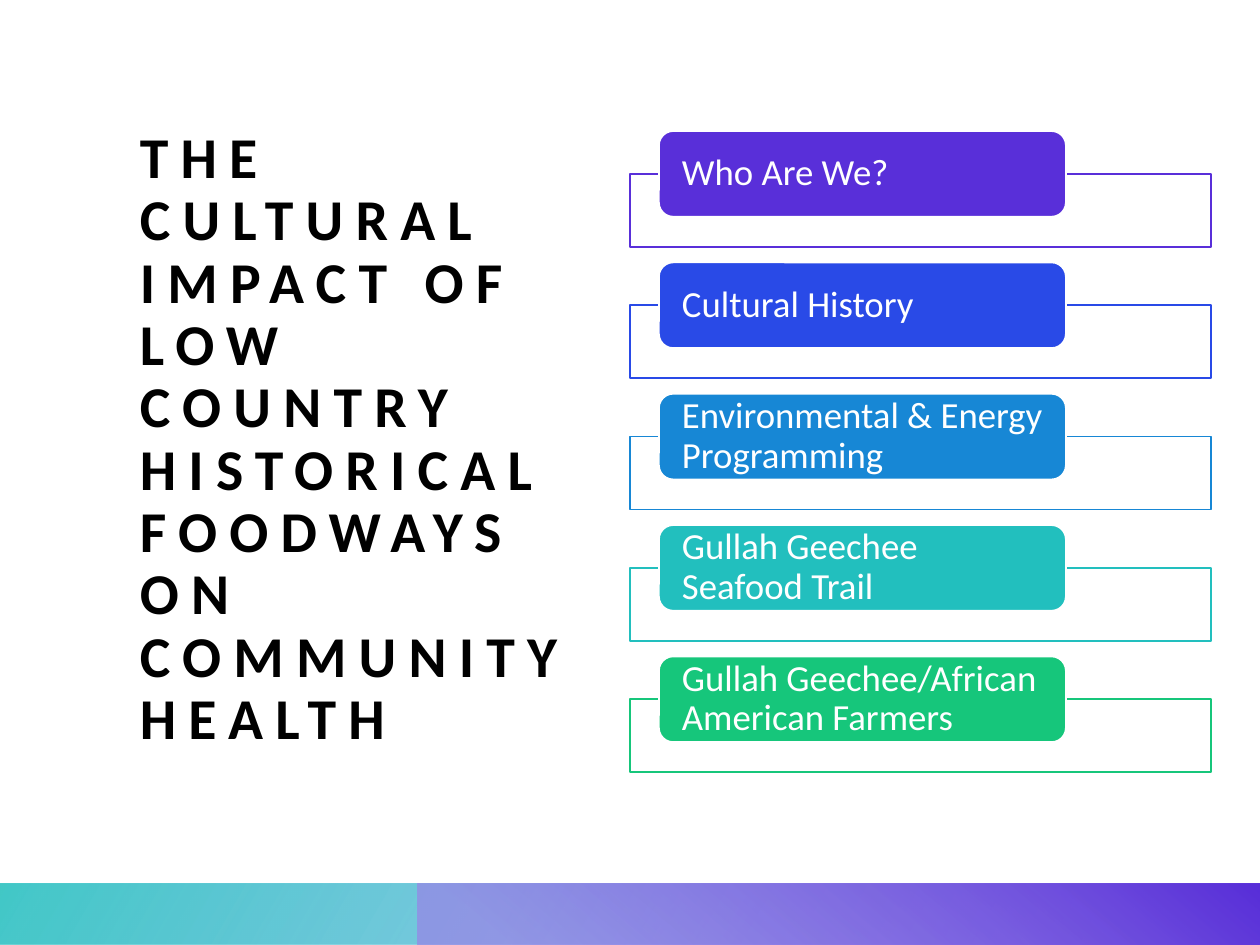
from lxml.etree import SubElement
from pptx import Presentation
from pptx.dml.color import RGBColor
from pptx.enum.shapes import MSO_SHAPE
from pptx.enum.text import MSO_ANCHOR, MSO_AUTO_SIZE, PP_ALIGN
from pptx.oxml.ns import qn
from pptx.util import Inches, Pt

TITLE = "THE CULTURAL IMPACT OF LOW COUNTRY HISTORICAL FOODWAYS ON COMMUNITY HEALTH"
TOPICS = [
    ("Who Are We?", "592FD9"),
    ("Cultural History", "294AE7"),
    ("Environmental & Energy Programming", "1787D5"),
    ("Gullah Geechee Seafood Trail", "22BFBE"),
    ("Gullah Geechee/African American Farmers", "16C67B"),
]
# left, width, angle, stops of (position %, colour, opacity %)
BANDS = [
    (0, 10, 210, [(14, "1787D5", 28), (100, "22BFBE", 85)]),
    (3.31, 6.69, 310, [(9, "9B82E8", 68), (99, "592FD9", 100)]),
]
TOP, LAST = 1.04, 5.21
STEP = (LAST - TOP) / (len(TOPICS) - 1)


def rgb(code):
    return RGBColor.from_string(code)


def fade(color, pct):
    """Set the opacity of a colour element."""
    SubElement(color, qn("a:alpha")).set("val", str(pct * 1000))


def add_box(slide, kind, box, fill=None, line=None):
    shape = slide.shapes.add_shape(kind, *map(Inches, box))
    shape.shadow.inherit = False
    if fill:
        shape.fill.solid()
        shape.fill.fore_color.rgb = rgb(fill)
    if line:
        shape.line.color.rgb = rgb(line)
        shape.line.width = Pt(1)
    else:
        shape.line.fill.background()
    return shape


def write(shape, text, size, color, bold=False, track=0, inset=0,
          anchor=MSO_ANCHOR.MIDDLE):
    frame = shape.text_frame
    frame.word_wrap = True
    frame.auto_size = MSO_AUTO_SIZE.NONE
    frame.vertical_anchor = anchor
    frame.margin_left = frame.margin_right = Inches(inset)
    frame.margin_top = frame.margin_bottom = 0
    para = frame.paragraphs[0]
    para.alignment = PP_ALIGN.LEFT
    para.line_spacing = 0.9
    run = para.add_run()
    run.text = text
    font = run.font
    font.name, font.size, font.bold = "Calibri", Pt(size), bold
    font.color.rgb = rgb(color)
    if track:
        run._r.get_or_add_rPr().set("spc", str(track * 100))


def add_band(slide, left, width, angle, stops):
    band = add_box(slide, MSO_SHAPE.RECTANGLE, (left, 7.01, width, 0.49))
    band.fill.gradient()
    grad = band._element.spPr.find(qn("a:gradFill"))
    for child in list(grad):
        grad.remove(child)
    group = SubElement(grad, qn("a:gsLst"))
    for pos, code, pct in stops:
        stop = SubElement(group, qn("a:gs"), pos=str(pos * 1000))
        fade(SubElement(stop, qn("a:srgbClr"), val=code), pct)
    SubElement(grad, qn("a:lin"), ang=str(angle * 60000), scaled="0")


def add_topic(slide, top, text, color):
    frame = add_box(slide, MSO_SHAPE.RECTANGLE, (5, top + 0.34, 4.61, 0.58),
                    "FFFFFF", color)
    fade(frame._element.spPr.find(qn("a:solidFill"))[0], 90)
    label = add_box(slide, MSO_SHAPE.ROUNDED_RECTANGLE,
                    (5.23, top, 3.23, 0.68), color, "FFFFFF")
    write(label, text, 21, "FFFFFF", inset=0.15)


def main():
    deck = Presentation()
    deck.slide_width, deck.slide_height = Inches(10), Inches(7.5)
    slide = deck.slides.add_slide(deck.slide_layouts[5])
    title = slide.shapes.title
    title.left, title.top = Inches(1.11), Inches(1.02)
    title.width, title.height = Inches(3.77), Inches(4.99)
    write(title, TITLE, 33, "000000", bold=True, track=7,
          anchor=MSO_ANCHOR.TOP)
    for band in BANDS:
        add_band(slide, *band)
    for i, (text, color) in enumerate(TOPICS):
        add_topic(slide, TOP + i * STEP, text, color)
    deck.save("out.pptx")


if __name__ == "__main__":
    main()
